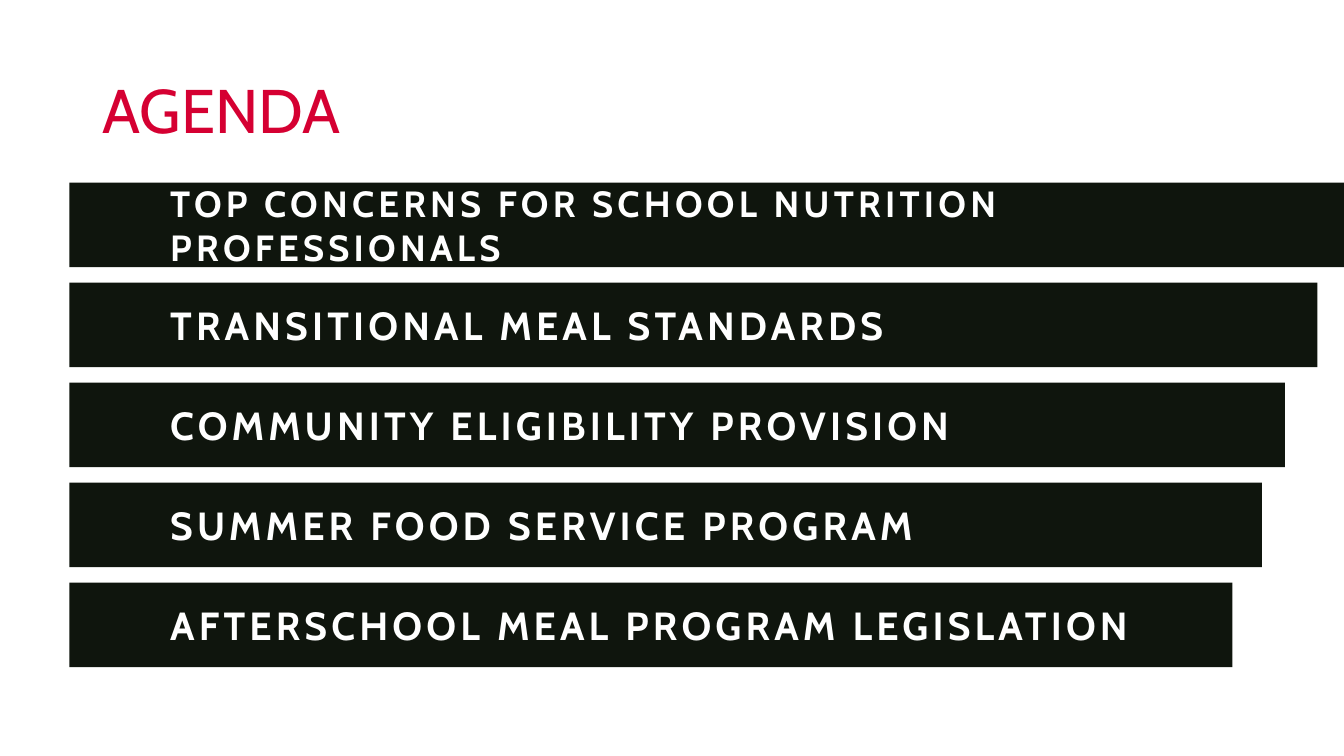
from typing import NamedTuple

from pptx import Presentation
from pptx.dml.color import RGBColor
from pptx.enum.shapes import MSO_SHAPE
from pptx.enum.text import MSO_ANCHOR, PP_ALIGN
from pptx.slide import Slide
from pptx.util import Cm, Pt

RED = RGBColor(0xD5, 0x00, 0x32)
BLACK = RGBColor(0x0F, 0x15, 0x0D)
WHITE = RGBColor(0xFF, 0xFF, 0xFF)
FONT = "Cabin"

BAR_LEFT, FIRST_BAR_TOP = 1.75, 4.6
BAR_HEIGHT, BAR_PITCH = 2.13, 2.52
LETTER_SPACING = 300  # hundredths of a point


class AgendaItem(NamedTuple):
    text: str
    width: float
    size: int = 28


AGENDA = [
    AgendaItem("TOP CONCERNS FOR SCHOOL NUTRITION PROFESSIONALS", 32.13, 26),
    AgendaItem("TRANSITIONAL MEAL STANDARDS", 31.45),
    AgendaItem("COMMUNITY ELIGIBILITY PROVISION", 30.63),
    AgendaItem("SUMMER FOOD SERVICE PROGRAM", 30.05),
    AgendaItem("AFTERSCHOOL MEAL PROGRAM LEGISLATION", 29.31),
]


def add_title(slide: Slide, text: str) -> None:
    title = slide.shapes.title
    title.left, title.top = Cm(2.33), Cm(1.02)
    title.width, title.height = Cm(29.21), Cm(3.68)
    title.text_frame.text = text
    title.text_frame.vertical_anchor = MSO_ANCHOR.MIDDLE
    paragraph = title.text_frame.paragraphs[0]
    paragraph.alignment = PP_ALIGN.LEFT
    paragraph.line_spacing = 0.9
    paragraph.font.name = FONT
    paragraph.font.size = Pt(44)
    paragraph.font.color.rgb = RED


def add_bar(slide: Slide, item: AgendaItem, top: float) -> None:
    bar = slide.shapes.add_shape(
        MSO_SHAPE.ROUNDED_RECTANGLE,
        Cm(BAR_LEFT), Cm(top), Cm(item.width), Cm(BAR_HEIGHT),
    )
    bar.adjustments[0] = 0
    bar.shadow.inherit = False
    bar.fill.solid()
    bar.fill.fore_color.rgb = BLACK
    bar.line.fill.background()

    frame = bar.text_frame
    frame.word_wrap = True
    frame.vertical_anchor = MSO_ANCHOR.MIDDLE
    frame.margin_left = Cm(2.54)
    paragraph = frame.paragraphs[0]
    paragraph.alignment = PP_ALIGN.LEFT
    run = paragraph.add_run()
    run.text = item.text
    run._r.get_or_add_rPr().set("spc", str(LETTER_SPACING))
    paragraph.font.name = FONT
    paragraph.font.size = Pt(item.size)
    paragraph.font.bold = True
    paragraph.font.color.rgb = WHITE


def main() -> None:
    presentation = Presentation()
    presentation.slide_width, presentation.slide_height = Cm(33.87), Cm(19.05)
    title_only = presentation.slide_layouts[5]
    slide = presentation.slides.add_slide(title_only)

    add_title(slide, "AGENDA")
    for index, item in enumerate(AGENDA):
        add_bar(slide, item, FIRST_BAR_TOP + index * BAR_PITCH)

    presentation.save("out.pptx")


if __name__ == "__main__":
    main()
